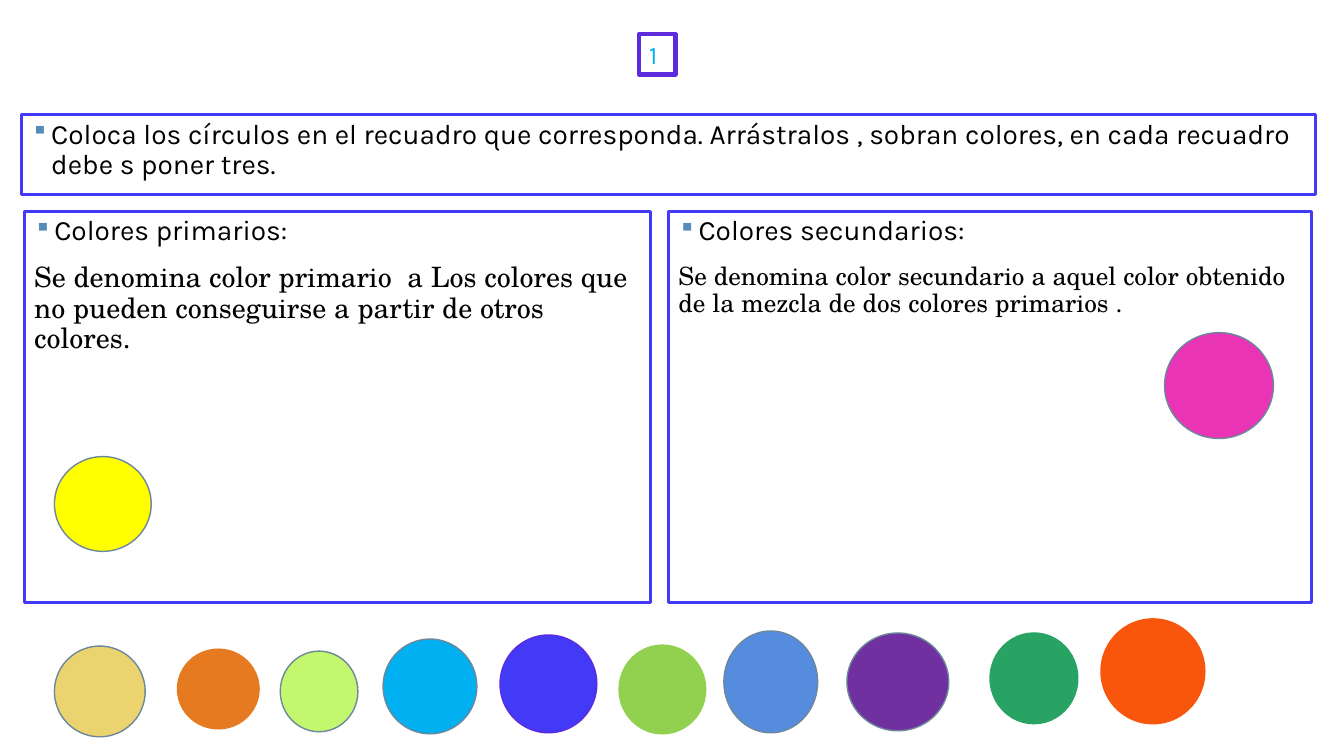
from lxml import etree
from pptx import Presentation
from pptx.dml.color import RGBColor
from pptx.enum.shapes import MSO_SHAPE
from pptx.enum.text import MSO_ANCHOR, PP_ALIGN
from pptx.oxml.ns import qn
from pptx.util import Inches, Pt

CIRCLE = MSO_SHAPE.FLOWCHART_CONNECTOR
RECTANGLE = MSO_SHAPE.RECTANGLE
TOP = MSO_ANCHOR.TOP
LEFT = PP_ALIGN.LEFT

SANS = "Karla"
SERIF = "TeX Gyre Schola"
BLACK = "000000"
SKY = "00B0F0"
INDIGO = "433AF8"
VIOLET = "5D2ADC"
SLATE = "6D879B"
BULLET = "558BB8"

CIRCLES = [
    (0.54, 4.53, 0.96, 0.94, "FFFF00", SLATE),
    (11.55, 3.3, 1.08, 1.05, "E834B5", SLATE),
    (0.54, 6.41, 0.9, 0.9, "EBD36F", SLATE),
    (1.76, 6.44, 0.81, 0.79, "E57A21", "E57A21"),
    (2.78, 6.46, 0.77, 0.8, "C3F86E", SLATE),
    (3.8, 6.34, 0.93, 0.94, SKY, SLATE),
    (4.96, 6.3, 0.96, 0.97, INDIGO, VIOLET),
    (6.14, 6.4, 0.86, 0.88, "92D050", "92D050"),
    (7.18, 6.26, 0.93, 1.01, "558CDD", SLATE),
    (8.4, 6.28, 1.01, 0.97, "7030A0", SLATE),
    (9.82, 6.28, 0.87, 0.9, "29A363", "29A363"),
    (10.92, 6.14, 1.03, 1.04, "F9560D", "F9560D"),
]


def color(value):
    """Turn a hex string into a colour."""
    return RGBColor.from_string(value)


class Worksheet:
    """Draws the elements of the colour exercise on one slide."""

    def __init__(self, page):
        self.page = page

    def shape(self, kind, place, line, width, fill=None):
        """Add an outlined shape, filled when a colour is given."""
        shape = self.page.shapes.add_shape(kind, *map(Inches, place))
        shape.shadow.inherit = False
        if fill:
            shape.fill.solid()
            shape.fill.fore_color.rgb = color(fill)
        else:
            shape.fill.background()
        shape.line.color.rgb = color(line)
        shape.line.width = Pt(width)
        return shape

    def circle(self, left, top, width, height, fill, line):
        """Add one coloured circle."""
        self.shape(CIRCLE, (left, top, width, height), line, 1, fill)

    def frame(self, place, line, width):
        """Add an empty framed box and return its text frame."""
        text_frame = self.shape(RECTANGLE, place, line, width).text_frame
        text_frame.word_wrap = True
        text_frame.vertical_anchor = TOP
        return text_frame

    def set_text(self, para, text, font, size, ink=BLACK):
        """Fill a paragraph and format it."""
        para.text = text
        para.alignment = LEFT
        for span in para.runs:
            span.font.name = font
            span.font.size = Pt(size)
            span.font.color.rgb = color(ink)

    def bullet(self, para):
        """Give a paragraph a small square bullet."""
        properties = para._p.get_or_add_pPr()
        properties.set("marL", str(Inches(0.2)))
        properties.set("indent", str(-Inches(0.2)))
        tint = etree.SubElement(properties, qn("a:buClr"))
        etree.SubElement(tint, qn("a:srgbClr"), val=BULLET)
        etree.SubElement(properties, qn("a:buSzPct"), val="85000")
        etree.SubElement(properties, qn("a:buChar"), char="▪")

    def panel(self, place, heading, body=None, size=20):
        """Add a framed box with a bulleted line and an optional definition."""
        text_frame = self.frame(place, INDIGO, 2.25)
        para = text_frame.paragraphs[0]
        self.bullet(para)
        self.set_text(para, heading, SANS, 20)
        para.line_spacing = 0.9
        if body:
            para = text_frame.add_paragraph()
            self.set_text(para, body, SERIF, size)
            para.line_spacing = 0.9
            para.space_before = Pt(12)

    def number(self, place, text):
        """Add the framed exercise number."""
        text_frame = self.frame(place, VIOLET, 3)
        self.set_text(text_frame.paragraphs[0], text, SANS, 18, SKY)


def main():
    """Build the slide and save it."""
    deck = Presentation()
    deck.slide_width = Inches(13.33)
    deck.slide_height = Inches(7.5)
    sheet = Worksheet(deck.slides.add_slide(deck.slide_layouts[6]))

    sheet.number((6.34, 0.34, 0.36, 0.4), "1")
    sheet.panel(
        (0.21, 1.14, 12.84, 0.79),
        "Coloca los círculos en el recuadro que corresponda. Arrástralos , "
        "sobran colores, en cada recuadro debe s poner tres.",
    )
    sheet.panel(
        (0.24, 2.1, 6.21, 3.88),
        "Colores primarios:",
        "Se denomina color primario  a Los colores que no pueden conseguirse "
        "a partir de otros colores.",
    )
    sheet.panel(
        (6.63, 2.1, 6.38, 3.88),
        "Colores secundarios:",
        "Se denomina color secundario a aquel color obtenido de la mezcla "
        "de dos colores primarios .",
        18,
    )
    for circle in CIRCLES:
        sheet.circle(*circle)
    deck.save("out.pptx")


if __name__ == "__main__":
    main()
